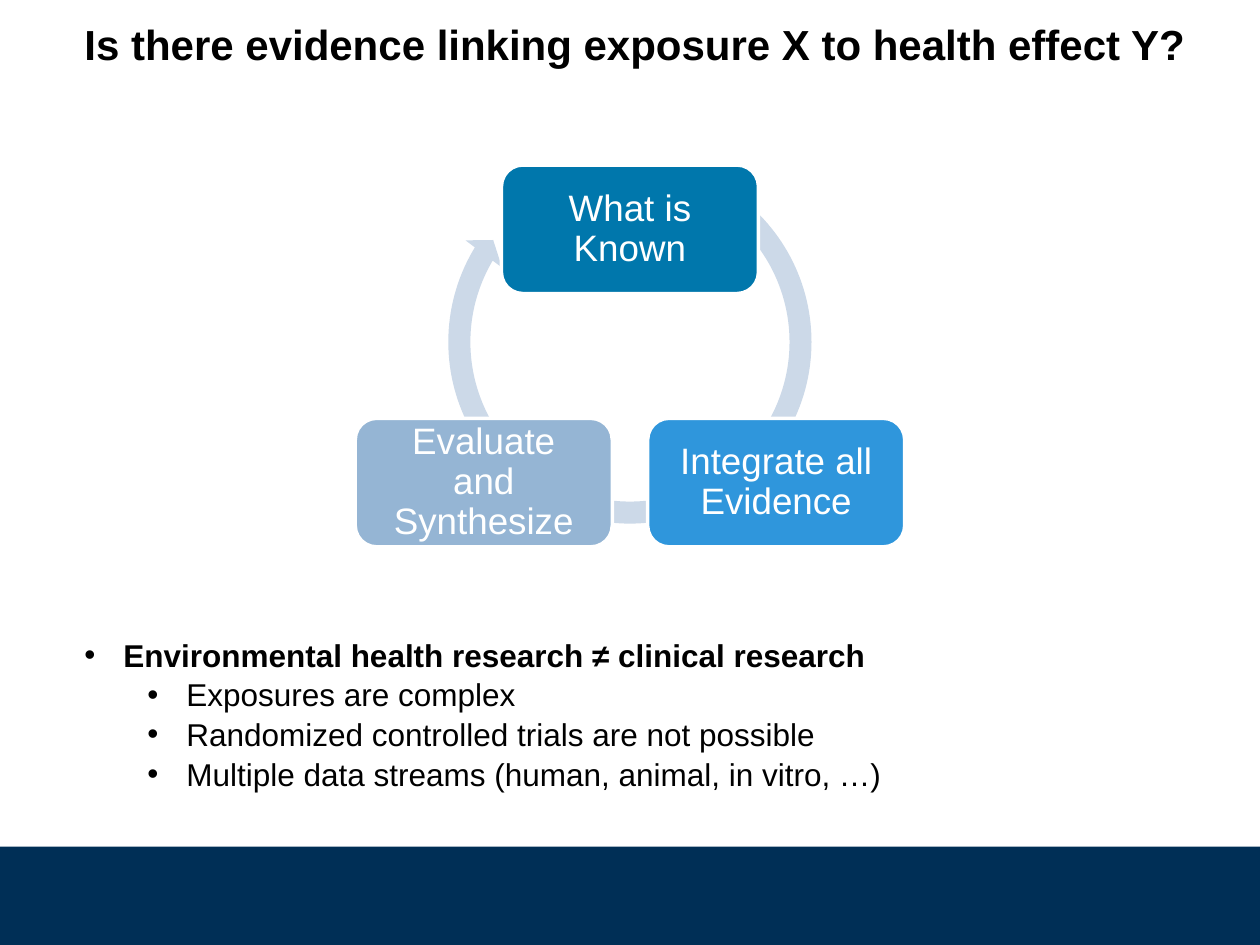
import math
from lxml import etree
from pptx import Presentation
from pptx.dml.color import RGBColor
from pptx.enum.shapes import MSO_SHAPE
from pptx.enum.text import MSO_ANCHOR, MSO_AUTO_SIZE, PP_ALIGN
from pptx.oxml.ns import qn
from pptx.util import Inches, Pt

RECT, ROUNDED, CYCLE_ARROW = (
    MSO_SHAPE.RECTANGLE, MSO_SHAPE.ROUNDED_RECTANGLE, MSO_SHAPE.CIRCULAR_ARROW)
LEFT, CENTER = PP_ALIGN.LEFT, PP_ALIGN.CENTER
TOP, MIDDLE = MSO_ANCHOR.TOP, MSO_ANCHOR.MIDDLE
FIXED = MSO_AUTO_SIZE.NONE

BLACK = RGBColor(0x00, 0x00, 0x00)
WHITE = RGBColor(0xFF, 0xFF, 0xFF)
NAVY = RGBColor(0x00, 0x2F, 0x56)
PALE = RGBColor(0xCC, 0xD9, 0xE8)
TEAL = RGBColor(0x00, 0x77, 0xAC)
BLUE = RGBColor(0x2F, 0x96, 0xDC)
STEEL = RGBColor(0x95, 0xB5, 0xD4)

WIDTH, HEIGHT = 10, 7.5
MARGIN = 0.57

prs = Presentation()
prs.slide_width, prs.slide_height = Inches(WIDTH), Inches(HEIGHT)
s = prs.slides.add_slide(prs.slide_layouts[1])


def add_block(shape, x, y, w, h, fill):
    sp = s.shapes.add_shape(shape, Inches(x), Inches(y), Inches(w), Inches(h))
    sp.shadow.inherit = False
    sp.fill.solid()
    sp.fill.fore_color.rgb = fill
    sp.line.fill.background()
    return sp


def format_text(p, size, color, bold=False):
    for r in p.runs:
        r.font.name = "Arial"
        r.font.size = Pt(size)
        r.font.bold = bold
        r.font.color.rgb = color


# Title and body placeholders
title, body = s.shapes.title, s.placeholders[1]
for sp, top, w, h in ((title, 0.1, 9.26, 0.5), (body, 4.98, 9.15, 1.62)):
    sp.left, sp.top, sp.width, sp.height = (
        Inches(MARGIN), Inches(top), Inches(w), Inches(h))
    sp.text_frame.word_wrap = True
    sp.text_frame.auto_size = FIXED
    sp.text_frame.vertical_anchor = TOP

title.text_frame.text = "Is there evidence linking exposure X to health effect Y?"
p = title.text_frame.paragraphs[0]
p.alignment = LEFT
format_text(p, 24, BLACK, bold=True)

# Bullet list
bullets = [
    (0, "Environmental health research ≠ clinical research"),
    (1, "Exposures are complex"),
    (1, "Randomized controlled trials are not possible"),
    (1, "Multiple data streams (human, animal, in vitro, …)"),
]
tf = body.text_frame
for i, (level, text) in enumerate(bullets):
    p = tf.paragraphs[0] if i == 0 else tf.add_paragraph()
    p.text = text
    p.level = level
    p.space_before = Pt(0)
    p.line_spacing = 1.05
    pPr = p._p.get_or_add_pPr()
    pPr.set("marL", str(Inches(0.31 + 0.5 * level)))
    pPr.set("indent", str(-Inches(0.31)))
    etree.SubElement(pPr, qn("a:buFont")).set("typeface", "Arial")
    etree.SubElement(pPr, qn("a:buChar")).set("char", "•")
    format_text(p, 18, BLACK, bold=level == 0)

# Footer band
band_top = 6.72
add_block(RECT, 0, band_top, WIDTH, HEIGHT - band_top, NAVY)

# Cycle arrow behind the nodes
ring = 3.07
arrow = add_block(CYCLE_ARROW, (WIDTH - ring) / 2, 1.18, ring, ring, PALE)
for i, value in enumerate((0.057, 3.405, 126.634, 180.999, 0.059)):
    arrow.adjustments[i] = value

# Nodes at equal angles, clockwise from the top
nodes = [
    ("What is Known", TEAL),
    ("Integrate all Evidence", BLUE),
    ("Evaluate and Synthesize", STEEL),
]
node_w, node_h = 2.04, 1.02
center_x, center_y, radius = WIDTH / 2, 3.16, 1.34
for i, (text, fill) in enumerate(nodes):
    angle = 2 * math.pi * i / len(nodes)
    x = center_x + radius * math.sin(angle) - node_w / 2
    y = center_y - radius * math.cos(angle) - node_h / 2
    sp = add_block(ROUNDED, x, y, node_w, node_h, fill)
    sp.line.color.rgb = WHITE
    sp.line.width = Pt(2)
    tf = sp.text_frame
    tf.word_wrap = True
    tf.vertical_anchor = MIDDLE
    tf.margin_left = tf.margin_right = Inches(0.14)
    tf.margin_top = tf.margin_bottom = Inches(0.14)
    tf.text = text
    p = tf.paragraphs[0]
    p.alignment = CENTER
    p.line_spacing = 0.9
    format_text(p, 21, WHITE)

prs.save("out.pptx")
